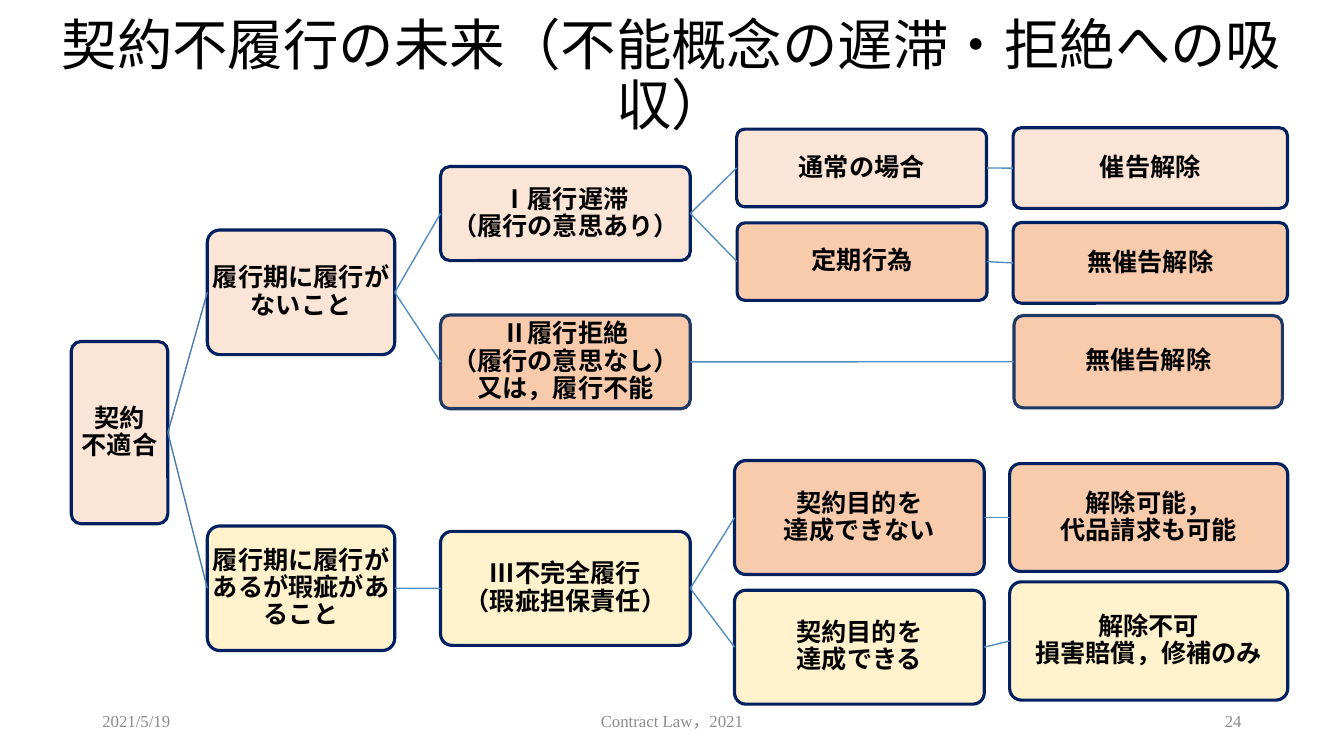
import pptx
import pptx.util
import pptx.dml.color
import pptx.enum.shapes
import pptx.enum.text
import pptx.oxml.ns
import lxml.etree
from dataclasses import dataclass

Pt = pptx.util.Pt
RGB = pptx.dml.color.RGBColor.from_string
PP_ALIGN = pptx.enum.text.PP_ALIGN
MIDDLE = pptx.enum.text.MSO_ANCHOR.MIDDLE
qn = pptx.oxml.ns.qn


@dataclass(frozen=True)
class Theme:
    latin: str = "Times New Roman"
    asian: str = "Noto Sans CJK JP"
    title_size: float = 39.6
    box_size: float = 18
    footer_size: float = 12
    text: str = "000000"
    footer: str = "8C8C8C"
    pale: str = "FBE5D6"
    strong: str = "F8CBAD"
    cream: str = "FFF2CC"
    navy: str = "002060"
    slate: str = "203864"
    trunk: str = "497CAB"
    branch: str = "538DC1"


theme = Theme()

TITLE = "契約不履行の未来（不能概念の遅滞・拒絶への吸収）"
NODES = [
    ("root", None, "契約\n不適合", (50.9, 243.9, 69, 130.2), theme.pale),
    ("none", "root", "履行期に履行がないこと", (148.1, 164.3, 133.9, 89), theme.pale),
    ("delay", "none", "Ⅰ履行遅滞\n（履行の意思あり）", (314.7, 118.9, 178.4, 67.2), theme.pale),
    ("usual", "delay", "通常の場合", (526.2, 92.3, 178.5, 55.4), theme.pale),
    ("notice", "usual", "催告解除", (723.7, 91.3, 196, 57.6), theme.pale),
    ("fixed", "delay", "定期行為", (526.5, 159.2, 178.5, 55.4), theme.strong),
    ("at once", "fixed", "無催告解除", (723.7, 159, 196, 57.6), theme.strong),
    ("refusal", "none", "Ⅱ履行拒絶\n（履行の意思なし）\n又は，履行不能", (314.7, 225, 178.4, 67), theme.strong),
    ("refusal end", "refusal", "無催告解除", (724.3, 225.4, 191.7, 66), theme.strong),
    ("defect", "root", "履行期に履行があるが瑕疵があること", (148.1, 375.7, 133.9, 89), theme.cream),
    ("partial", "defect", "Ⅲ不完全履行\n（瑕疵担保責任）", (314.7, 379.6, 178.4, 81.4), theme.cream),
    ("missed", "partial", "契約目的を\n達成できない", (524.7, 329, 178.4, 81.4), theme.strong),
    ("cancel", "missed", "解除可能，\n代品請求も可能", (721.2, 331.2, 198.7, 77), theme.strong),
    ("met", "partial", "契約目的を\n達成できる", (524.7, 421.6, 178.4, 81.4), theme.cream),
    ("repair", "met", "解除不可\n損害賠償，修補のみ", (721.2, 415.6, 198.7, 84.5), theme.cream),
]
SLATE_NODES = {"refusal", "refusal end"}
FOOTERS = [
    ("2021/5/19", (66, 500.5, 216, 28.8), PP_ALIGN.LEFT),
    ("Contract Law，2021", (318, 500.5, 324, 28.8), PP_ALIGN.CENTER),
    ("24", (678, 500.5, 216, 28.8), PP_ALIGN.RIGHT),
]


def write(tf, text, size, color, latin, align, bold=False, spacing=None):
    tf.word_wrap = True
    tf.auto_size = pptx.enum.text.MSO_AUTO_SIZE.NONE
    tf.vertical_anchor = MIDDLE
    p = tf.paragraphs[0]
    p.text = text
    p.alignment = align
    p.line_spacing = spacing
    font = p.font
    font.size = Pt(size)
    font.bold = bold
    font.name = latin
    font.color.rgb = RGB(color)
    ea = lxml.etree.SubElement(p._p.pPr.find(qn("a:defRPr")), qn("a:ea"))
    ea.set("typeface", theme.asian)


def add_node(s, text, frame, fill, outline):
    sp = s.shapes.add_shape(
        pptx.enum.shapes.MSO_SHAPE.ROUNDED_RECTANGLE, *map(Pt, frame))
    sp.adjustments[0] = 0.1
    sp.shadow.inherit = False
    sp.fill.solid()
    sp.fill.fore_color.rgb = RGB(fill)
    sp.line.color.rgb = RGB(outline)
    sp.line.width = Pt(2.25)
    tf = sp.text_frame
    tf.margin_left = tf.margin_right = tf.margin_top = tf.margin_bottom = Pt(0.7)
    write(tf, text, theme.box_size, theme.text, theme.latin,
          PP_ALIGN.CENTER, True, 0.9)
    return sp


def add_link(s, parent, child, color):
    link = s.shapes.add_connector(
        pptx.enum.shapes.MSO_CONNECTOR.STRAIGHT,
        parent.left + parent.width, parent.top + parent.height // 2,
        child.left, child.top + child.height // 2)
    link.begin_connect(parent, 3)
    link.end_connect(child, 1)
    link.line.color.rgb = RGB(color)
    link.line.width = Pt(1)
    lxml.etree.SubElement(link._element.spPr, qn("a:effectLst"))


def main():
    prs = pptx.Presentation()
    prs.slide_width, prs.slide_height = Pt(960), Pt(540)
    s = prs.slides.add_slide(prs.slide_layouts[5])

    title = s.shapes.title
    title.left, title.top, title.width, title.height = map(Pt, (17.4, 28.5, 924.5, 54))
    write(title.text_frame, TITLE, theme.title_size, theme.text, theme.asian,
          PP_ALIGN.CENTER, spacing=0.9)

    boxes = {}
    for key, parent, text, frame, fill in NODES:
        outline = theme.slate if key in SLATE_NODES else theme.navy
        boxes[key] = add_node(s, text, frame, fill, outline)
        if parent:
            color = theme.trunk if parent == "root" else theme.branch
            add_link(s, boxes[parent], boxes[key], color)

    for text, frame, align in FOOTERS:
        tf = s.shapes.add_textbox(*map(Pt, frame)).text_frame
        write(tf, text, theme.footer_size, theme.footer, theme.latin, align)

    prs.save("out.pptx")


if __name__ == "__main__":
    main()
